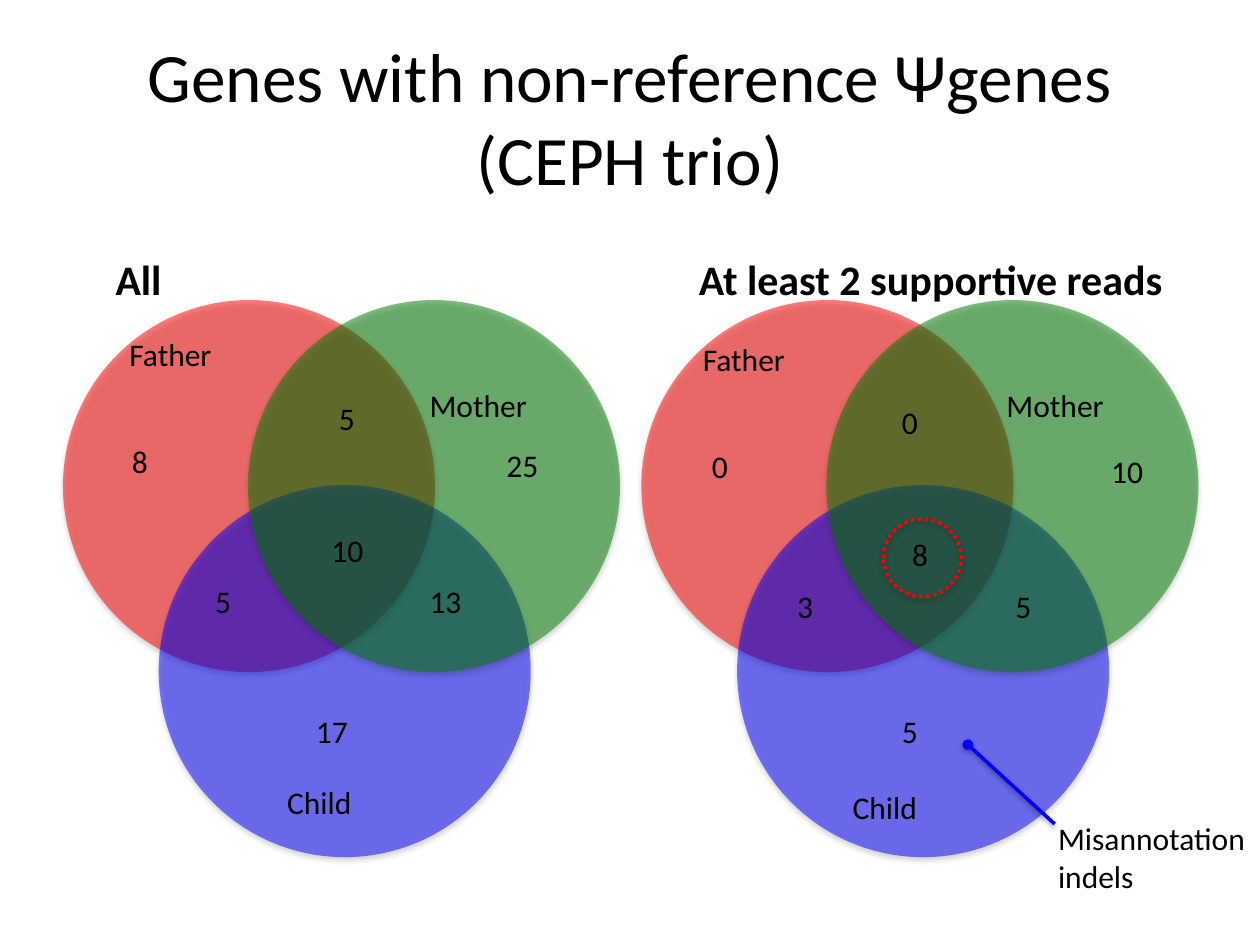
from lxml import etree
from pptx import Presentation
from pptx import util as u
from pptx.dml.color import RGBColor
from pptx.enum import dml, shapes, text
from pptx.oxml import ns

TITLE = ["Genes with non-reference Ψgenes", "(CEPH trio)"]
VENNS = [
    {"heading": "All", "heading_left": 2.08, "left": 1.27, "labels": [
        ("Father", 2.36, 6.63), ("Mother", 8.41, 7.65), ("Child", 5.54, 15.67),
        ("8", 2.41, 8.79), ("5", 6.58, 7.92), ("25", 9.96, 8.86),
        ("10", 6.43, 10.59), ("5", 4.09, 11.61), ("13", 8.41, 11.61),
        ("17", 6.12, 14.22)]},
    {"heading": "At least 2 supportive reads", "heading_left": 13.84, "left": 12.93, "labels": [
        ("Father", 13.92, 6.73), ("Mother", 20.04, 7.65), ("Child", 16.94, 15.77),
        ("0", 14.1, 8.89), ("0", 17.93, 8), ("10", 22.15, 8.99),
        ("8", 18.14, 10.67), ("3", 15.82, 11.71), ("5", 20.22, 11.71),
        ("5", 17.93, 14.22)]},
]
CIRCLES = [("FF0000", 0, 0), ("0000FF", 1.93, 3.73), ("008000", 3.73, 0)]
VENN_TOP, DIAMETER = 6.05, 7.5
LABEL_WIDTHS = {"Father": 2.18, "Mother": 2.49, "Child": 1.83}
NOTE = ["Misannotation", "indels"]


def color(value):
    return RGBColor.from_string(value)


def element(parent, tag, **attributes):
    return etree.SubElement(parent, ns.qn(tag), attributes)


def add_shadow(effects, distance, opacity):
    shadow = element(effects, "a:outerShdw", blurRad="40000", dist=str(distance),
                     dir="5400000", rotWithShape="0")
    black = element(shadow, "a:srgbClr", val="000000")
    element(black, "a:alpha", val=str(opacity * 1000))


def add_text(slide, lines, left, top, width, height, size=18, bold=False, wrap=False,
             align=text.PP_ALIGN.LEFT, anchor=text.MSO_ANCHOR.TOP):
    box = slide.shapes.add_textbox(u.Cm(left), u.Cm(top), u.Cm(width), u.Cm(height))
    frame = box.text_frame
    frame.word_wrap = wrap
    frame.vertical_anchor = anchor
    for index, line in enumerate(lines):
        paragraph = frame.add_paragraph() if index else frame.paragraphs[0]
        paragraph.alignment = align
        run = paragraph.add_run()
        run.text = line
        run.font.name = "Calibri"
        run.font.size = u.Pt(size)
        run.font.bold = bold
        run.font.color.rgb = color("000000")


def add_circle(slide, left, top, diameter, fill=None):
    circle = slide.shapes.add_shape(shapes.MSO_SHAPE.OVAL, u.Cm(left), u.Cm(top),
                                    u.Cm(diameter), u.Cm(diameter))
    if fill:
        circle.fill.solid()
        circle.fill.fore_color.rgb = color(fill)
        tint = circle._element.spPr.find(".//" + ns.qn("a:srgbClr"))
        element(tint, "a:alpha", val="50000")
        circle.line.fill.background()
    else:
        circle.fill.background()
        circle.line.color.rgb = color("FF0000")
        circle.line.width = u.Pt(2)
        circle.line.dash_style = dml.MSO_LINE.ROUND_DOT
    circle.shadow.inherit = False
    add_shadow(circle._element.spPr.find(ns.qn("a:effectLst")), 23000, 35)


def add_pointer(slide, start, end):
    pointer = slide.shapes.add_connector(shapes.MSO_CONNECTOR.STRAIGHT,
                                         *(u.Cm(value) for value in start + end))
    pointer.line.color.rgb = color("0000FF")
    pointer.line.width = u.Pt(2)
    element(pointer.line._get_or_add_ln(), "a:tailEnd", type="oval")
    add_shadow(element(pointer._element.spPr, "a:effectLst"), 20000, 38)


def main():
    deck = Presentation()
    deck.slide_width, deck.slide_height = u.Cm(25.4), u.Cm(19.05)
    slide = deck.slides.add_slide(deck.slide_layouts[6])

    add_text(slide, TITLE, 1.27, 0.76, 22.86, 3.18, size=39.6, wrap=True,
             align=text.PP_ALIGN.CENTER, anchor=text.MSO_ANCHOR.MIDDLE)
    for venn in VENNS:
        add_text(slide, [venn["heading"]], venn["heading_left"], 3.94, 9.91, 2.31,
                 size=24, bold=True, wrap=True, anchor=text.MSO_ANCHOR.BOTTOM)
        for fill, right, down in CIRCLES:
            add_circle(slide, venn["left"] + right, VENN_TOP + down, DIAMETER, fill)
        for label, left, top in venn["labels"]:
            width = LABEL_WIDTHS.get(label, 0.51 + 0.33 * len(label))
            add_text(slide, [label], left, top, width, 1.02)

    add_text(slide, NOTE, 21.08, 16.38, 4.32, 1.8)
    add_pointer(slide, (21.26, 16.61), (19.51, 15.01))
    add_circle(slide, 17.81, 10.46, 1.57)
    deck.save("out.pptx")


if __name__ == "__main__":
    main()
